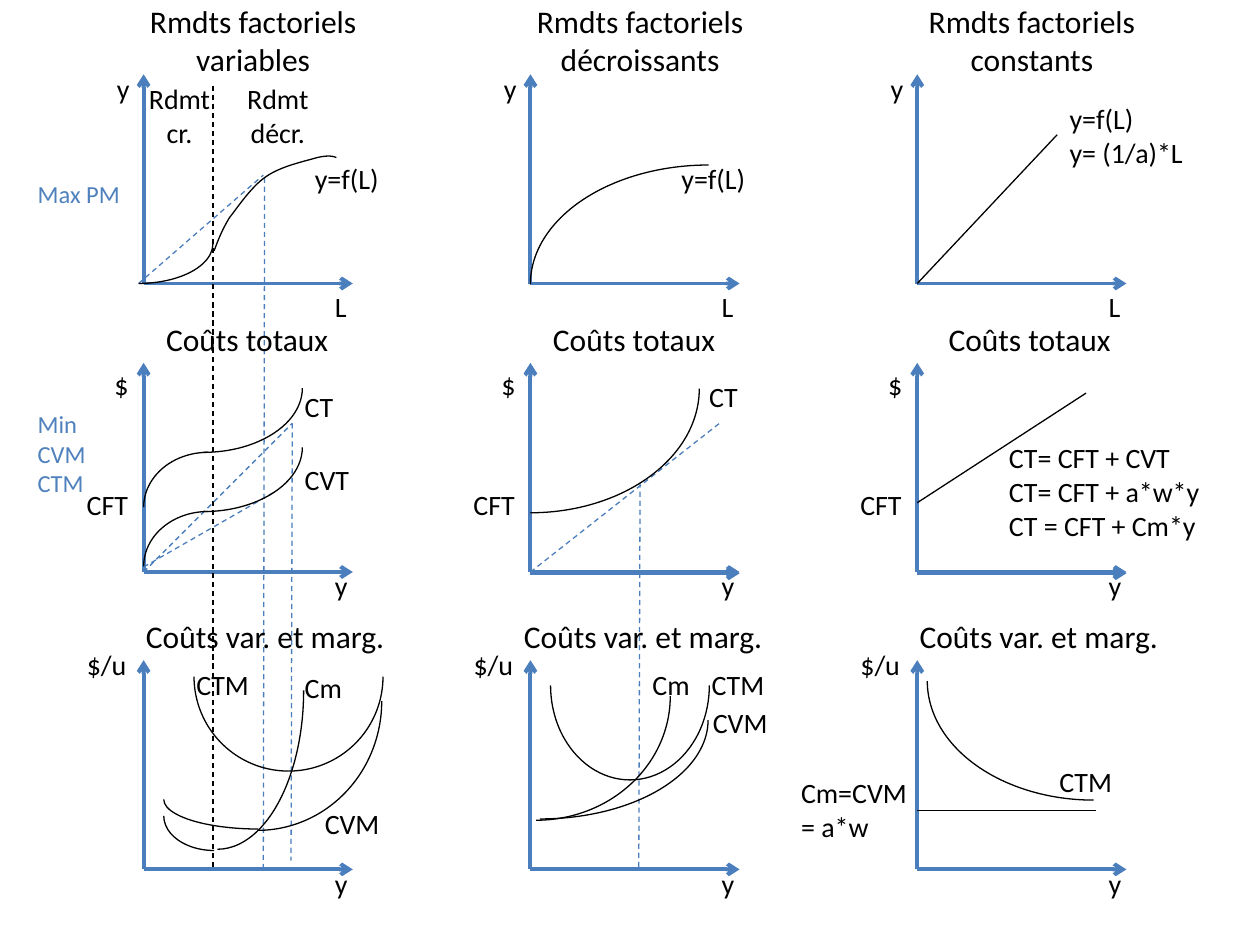
from dataclasses import dataclass
from itertools import product

from lxml import etree
from pptx import Presentation
from pptx.dml import color
from pptx.enum import dml, shapes, text
from pptx.oxml import ns
from pptx.util import Inches, Pt

BLACK, AXIS, BLUE = "000000", "4B7EBC", "4F81BD"
COLUMNS = (1.14, 4.21, 7.28)
ROWS = (2.25, 4.54, 6.9)
AXIS_LENGTH = 1.66
QUADRANTS = {"BR": (0, 90), "BL": (90, 180), "TL": (180, -90), "TR": (-90, 0)}
DEGREE = 0.6


@dataclass
class Label:
    text: str
    x: float
    y: float
    w: float
    size: int = 16
    color: str = BLACK
    centered: bool = False
    wrapped_lines: int = 0


@dataclass
class Line:
    x1: float
    y1: float
    x2: float
    y2: float
    color: str = BLACK
    width: float = 0.75
    dashed: bool = False
    arrow: bool = False


@dataclass
class Arc:
    x: float
    y: float
    w: float
    h: float
    quadrant: str


def rgb(value: str) -> color.RGBColor:
    return color.RGBColor.from_string(value)


def set_all(target, values: dict) -> None:
    for name, value in values.items():
        setattr(target, name, value)


def draw_label(s, label: Label) -> None:
    lines = label.wrapped_lines or label.text.count("\n") + 1
    height = round(0.1 + lines * label.size * 1.22 / 72, 2)
    box = s.shapes.add_textbox(*map(Inches, (label.x, label.y, label.w, height)))
    tf = box.text_frame
    set_all(tf, {"word_wrap": label.wrapped_lines > 0,
                 "auto_size": text.MSO_AUTO_SIZE.SHAPE_TO_FIT_TEXT})
    tf.text = label.text
    for p in tf.paragraphs:
        p.alignment = text.PP_ALIGN.CENTER if label.centered else text.PP_ALIGN.LEFT
        for r in p.runs:
            set_all(r.font, {"name": "Calibri", "size": Pt(label.size)})
            r.font.color.rgb = rgb(label.color)


def draw_line(s, line: Line) -> None:
    ends = map(Inches, (line.x1, line.y1, line.x2, line.y2))
    c = s.shapes.add_connector(shapes.MSO_CONNECTOR.STRAIGHT, *ends)
    c.line.color.rgb = rgb(line.color)
    c.line.width = Pt(line.width)
    if line.dashed:
        c.line.dash_style = dml.MSO_LINE.DASH
    if line.arrow:
        etree.SubElement(c._element.spPr.find(ns.qn("a:ln")), ns.qn("a:tailEnd"), type="arrow")
    etree.SubElement(c._element.spPr, ns.qn("a:effectLst"))


def outline(sp) -> None:
    sp.shadow.inherit = False
    sp.fill.background()
    sp.line.color.rgb = rgb(BLACK)
    sp.line.width = Pt(0.75)


def draw_arc(s, arc: Arc) -> None:
    frame = map(Inches, (arc.x, arc.y, arc.w, arc.h))
    sp = s.shapes.add_shape(shapes.MSO_SHAPE.ARC, *frame)
    for i, angle in enumerate(QUADRANTS[arc.quadrant]):
        sp.adjustments[i] = angle % 360 * DEGREE
    outline(sp)


def draw_curve(s, start: tuple, segments: list, steps: int = 12) -> None:
    points, p0 = [], start
    for p1, p2, p3 in segments:
        for t in (i / steps for i in range(1, steps + 1)):
            weights = ((1 - t) ** 3, 3 * t * (1 - t) ** 2, 3 * t * t * (1 - t), t ** 3)
            points.append(tuple(Inches(sum(k * p[axis] for k, p in zip(weights, (p0, p1, p2, p3))))
                                for axis in (0, 1)))
        p0 = p3
    builder = s.shapes.build_freeform(Inches(start[0]), Inches(start[1]))
    builder.add_line_segments(points, close=False)
    outline(builder.convert_to_shape())


def axis_line(x: float, y: float, dx: float, dy: float) -> Line:
    return Line(x, y, x + dx, y + dy, AXIS, 2.25, arrow=True)


def guide(x1: float, y1: float, x2: float, y2: float) -> Line:
    return Line(x1, y1, x2, y2, AXIS, dashed=True)


def column_labels(x: float) -> list[Label]:
    return [
        Label("y", x - 0.31, 0.52, 0.3),
        Label("L", x + 1.42, 2.25, 0.3),
        Label("$", x - 0.33, 2.87, 0.32),
        Label("CFT", x - 0.55, 3.82, 0.53),
        Label("y", x + 1.42, 4.46, 0.3),
        Label("$/u", x - 0.55, 5.09, 0.52),
        Label("y", x + 1.42, 6.83, 0.3),
    ]


AXES = [axis_line(x, y, *delta) for x, y in product(COLUMNS, ROWS)
        for delta in ((AXIS_LENGTH, 0), (0, -AXIS_LENGTH))]
AXES += [axis_line(x, 4.55, AXIS_LENGTH, 0) for x in COLUMNS[1:]]

LINES = [
    Line(7.28, 3.99, 8.62, 3.12),
    Line(7.28, 2.25, 8.39, 1.07),
    Line(7.28, 6.43, 8.7, 6.43),
    Line(1.69, 0.68, 1.69, 6.9, dashed=True),
    guide(1.14, 4.54, 2.32, 3.36),
    guide(2.32, 3.36, 2.31, 6.83),
    guide(1.14, 4.5, 2.17, 3.91),
    guide(2.1, 1.41, 2.09, 6.88),
    guide(1.1, 2.25, 2.09, 1.39),
    guide(4.21, 4.54, 5.71, 3.36),
    guide(5.08, 3.83, 5.07, 6.88),
]

ARCS = [
    Arc(4.21, 1.31, 2.83, 1.89, "TL"),
    Arc(2.87, 2.1, 2.68, 1.97, "BR"),
    Arc(7.36, 4.46, 2.64, 1.89, "BL"),
    Arc(3.19, 4.54, 2.13, 1.97, "BR"),
    Arc(2.95, 4.93, 2.67, 1.57, "BR"),
    Arc(1.04, 4.22, 1.37, 2.52, "BR"),
    Arc(1.3, 6.2, 0.8, 0.55, "BL"),
    Arc(1.06, 4.54, 1.97, 2.05, "BR"),
    Arc(1.3, 6.11, 1.5, 0.47, "BL"),
    Arc(0.51, 1.62, 1.18, 0.63, "BR"),
]
ARCS += [Arc(0.83, y, 1.57, 1.02, "BR") for y in (2.57, 3.04)]
ARCS += [Arc(1.14, y, 1.02, 0.87, "TL") for y in (3.59, 4.06)]
ARCS += [Arc(*frame, side) for frame in ((4.37, 4.69, 1.26, 1.5), (1.54, 4.62, 1.5, 1.5))
         for side in ("BR", "BL")]

LABELS = [label for x in COLUMNS for label in column_labels(x)]
LABELS += [Label(f"Rmdts factoriels {kind}", x, -0.03, w, 18, centered=True, wrapped_lines=2)
           for kind, x, w in (("variables", 0.83, 2.36), ("décroissants", 3.74, 2.68),
                              ("constants", 6.97, 2.44))]
LABELS += [Label("Coûts totaux", x, 2.49, 1.5, 18) for x in (1.22, 4.29, 7.43)]
LABELS += [Label("Coûts var. et marg.", x, 4.85, 2.11, 18) for x in (1.06, 4.06, 7.2)]
LABELS += [Label(f"Rdmt\n{kind}", x, 0.6, 0.69, centered=True)
           for kind, x in (("cr.", 1.08), ("décr.", 1.86))]
LABELS += [Label("y=f(L)", x, 1.23, 0.72) for x in (2.4, 5.31)]
LABELS += [Label("CT", x, y, 0.43) for x, y in ((2.32, 3.04), (5.53, 2.96))]
LABELS += [Label("Cm", x, y, 0.5) for x, y in ((2.32, 5.27), (5.08, 5.25))]
LABELS += [Label("CVM", x, y, 0.64) for x, y in ((2.48, 6.35), (5.56, 5.55))]
LABELS += [Label("CTM", x, y, 0.62) for x, y in ((1.46, 5.25), (5.55, 5.25), (8.31, 6.02))]
LABELS += [
    Label("CVT", 2.32, 3.62, 0.56),
    Label("y=f(L)\ny= (1/a)*L", 8.39, 0.76, 1.11),
    Label("CT= CFT + CVT\nCT= CFT + a*w*y\nCT = CFT + Cm*y", 7.91, 3.45, 1.8),
    Label("Cm=CVM\n= a*w", 6.26, 6.11, 1.18, wrapped_lines=2),
    Label("Max PM", 0.2, 1.37, 0.86, 14, BLUE),
    Label("Min CVM CTM", 0.2, 3.2, 0.87, 14, BLUE, wrapped_lines=3),
]

PRODUCTION_CURVE = [
    ((1.73, 1.91), (1.76, 1.83), (1.82, 1.73)),
    ((1.89, 1.64), (1.99, 1.49), (2.1, 1.41)),
    ((2.22, 1.32), (2.42, 1.28), (2.52, 1.25)),
    ((2.61, 1.23), (2.64, 1.24), (2.67, 1.25)),
]


def main() -> None:
    prs = Presentation()
    set_all(prs, {"slide_width": Inches(10), "slide_height": Inches(7.5)})
    s = prs.slides.add_slide(prs.slide_layouts[6])
    for draw, items in ((draw_line, AXES + LINES), (draw_arc, ARCS), (draw_label, LABELS)):
        for item in items:
            draw(s, item)
    draw_curve(s, (1.7, 1.99), PRODUCTION_CURVE)
    prs.save("out.pptx")


if __name__ == "__main__":
    main()
